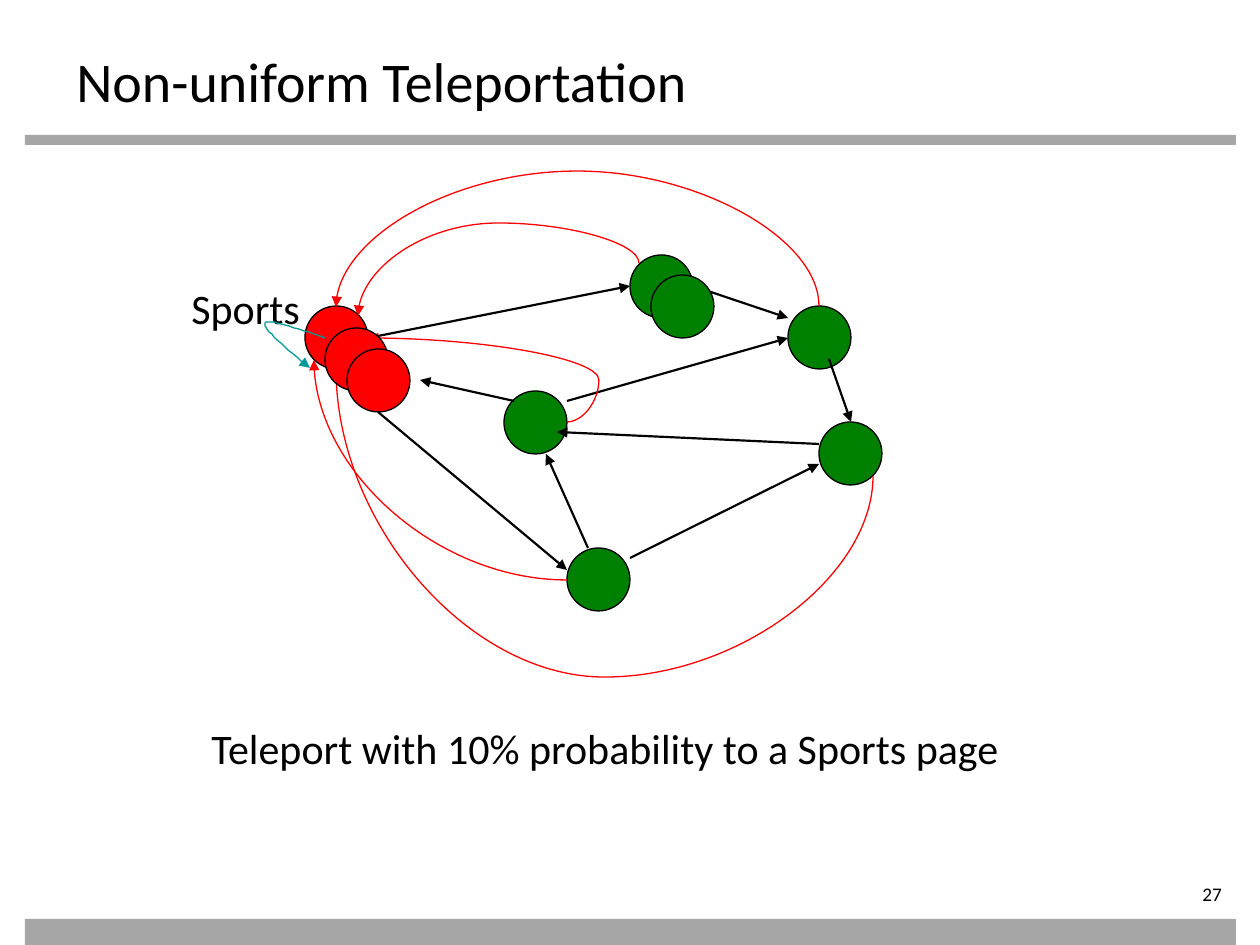
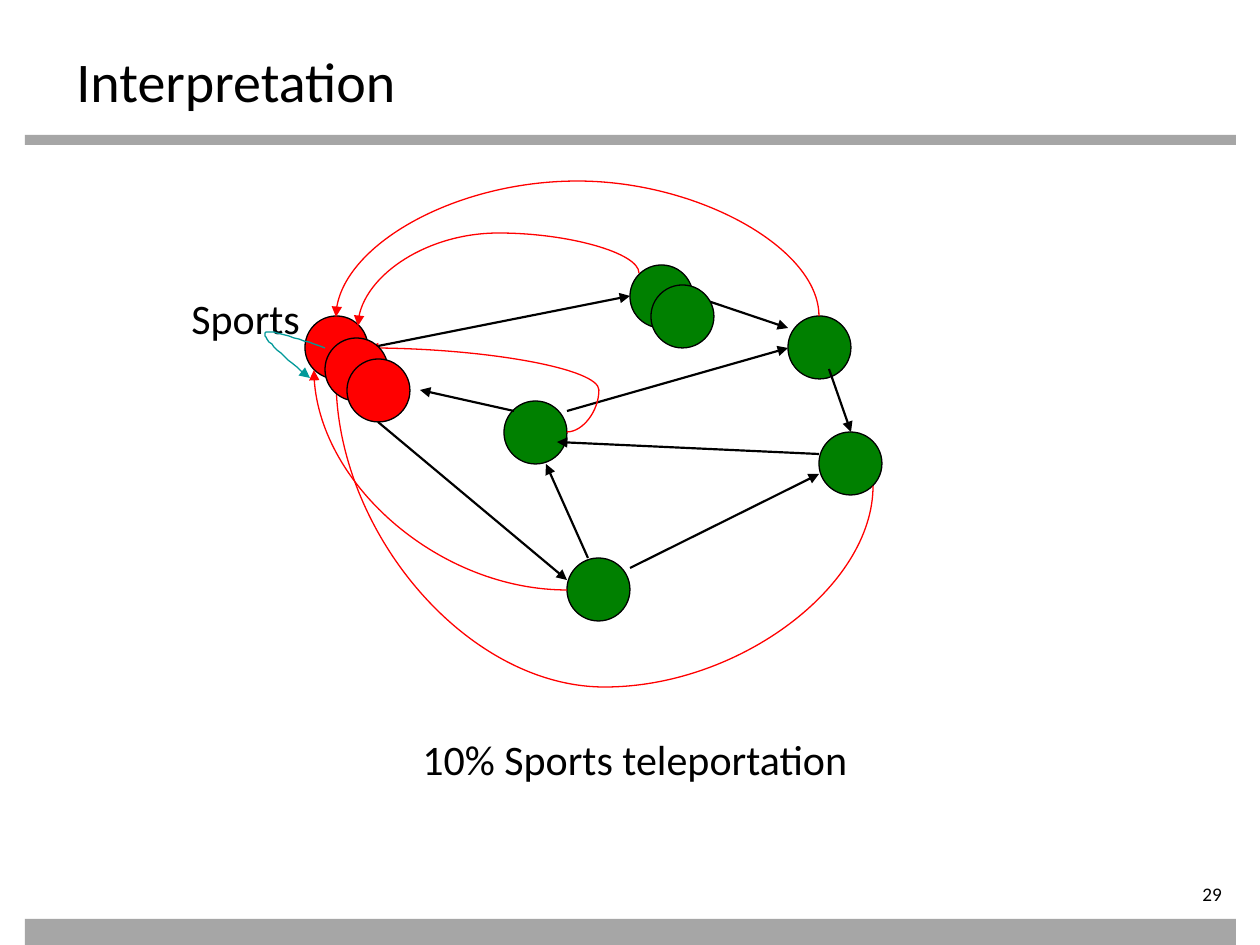
from lxml import etree
from pptx import Presentation
from pptx import util as u
from pptx.dml.color import RGBColor
from pptx.enum import shapes, text
from pptx.oxml.ns import qn

PX = 914400 / 126
FONT = "Calibri"
BLACK, GREY, RED, GREEN, TEAL = "000000", "A6A6A6", "FF0000", "008000", "009999"
NODE = 63

# Graph parts, in px from the corner of the graph box
SPORTS_BACK, SPORTS_FRONT = [(105, 126)], [(125, 148), (147, 169)]
OTHER_BACK = [(430, 75), (304, 211), (367, 368), (588, 126), (619, 242)]
OTHER_FRONT = [(451, 95)]
LINKS_BACK = [
    ((168, 158), (430, 106)), ((367, 221), (588, 158)),
    ((430, 378), (619, 284)), ((619, 264), (357, 252)),
    ((493, 106), (588, 138)), ((629, 179), (651, 242)),
    ((388, 368), (346, 274)),
]
LINKS_FRONT = [((314, 221), (220, 200)), ((178, 232), (367, 390))]
# Start, end, direction of departure, position of the bend (None: one corner)
TELEPORTS = [
    ((619, 126), (136, 127), "vertical", -10),
    ((439, 83), (158, 136), "vertical", 43),
    ((367, 400), (114, 180), "horizontal", None),
    ((367, 242), (168, 158), "horizontal", 399),
    ((673, 296), (136, 189), "vertical", 497),
]
SELF_LOOP = [
    ((125, 158), (96, 148), (67, 138), (65, 143)),
    ((65, 143), (62, 148), (86, 168), (110, 188)),
]


def px(n):
    return u.Emu(round(n * PX))


def colour(code):
    return RGBColor.from_string(code)


def add_text(slide, box, words, size=24, align="LEFT", insets=None):
    frame = slide.shapes.add_textbox(*map(px, box)).text_frame
    frame.word_wrap = True
    if insets:
        (frame.margin_left, frame.margin_top,
         frame.margin_right, frame.margin_bottom) = map(px, insets)
    line = frame.paragraphs[0]
    line.alignment = getattr(text.PP_ALIGN, align)
    run = line.add_run()
    run.text = words
    run.font.name, run.font.size = FONT, u.Pt(size)
    run.font.color.rgb = colour(BLACK)


def add_filled(slide, kind, box, fill, outline=None):
    shape = slide.shapes.add_shape(kind, *map(px, box))
    shape.shadow.inherit = False
    shape.fill.solid()
    shape.fill.fore_color.rgb = colour(fill)
    if outline:
        shape.line.color.rgb = colour(outline)
        shape.line.width = u.Pt(0.75)
    else:
        shape.line.fill.background()


def style_arrow(arrow, line_colour, width):
    arrow.line.color.rgb = colour(line_colour)
    arrow.line.width = u.Pt(width)
    ln = arrow.line._get_or_add_ln()
    etree.SubElement(ln, qn("a:tailEnd"), type="triangle")


def add_arrow(slide, start, end, line_colour, width, kind="STRAIGHT"):
    arrow = slide.shapes.add_connector(
        getattr(shapes.MSO_CONNECTOR, kind), *map(px, start + end))
    style_arrow(arrow, line_colour, width)
    etree.SubElement(arrow._element.spPr, qn("a:effectLst"))
    return arrow


def add_teleport(slide, start, end, departure, bend):
    arrow = add_arrow(slide, start, end, RED, 0.75, "CURVE")
    geometry = arrow._element.spPr.find(qn("a:prstGeom"))
    if bend is None:
        geometry.set("prst", "curvedConnector2")
        return
    axis = 1 if departure == "vertical" else 0
    ratio = (bend - start[axis]) / (end[axis] - start[axis])
    etree.SubElement(geometry.find(qn("a:avLst")), qn("a:gd"),
                     name="adj1", fmla=f"val {round(ratio * 100000)}")
    if departure == "vertical":
        # Swap the sides around the centre and turn the curve upright
        left, top, width, height = arrow.left, arrow.top, arrow.width, arrow.height
        arrow.left = u.Emu(left + (width - height) // 2)
        arrow.top = u.Emu(top + (height - width) // 2)
        arrow.width, arrow.height = height, width
        turn = arrow._element.spPr.find(qn("a:xfrm"))
        turn.set("rot", str(270 * 60000))
        turn.set("flipH", str(int(end[1] > start[1])))
        turn.set("flipV", "1")


def bezier(curve, t):
    weights = ((1 - t) ** 3, 3 * t * (1 - t) ** 2, 3 * t * t * (1 - t), t ** 3)
    return tuple(sum(w * point[axis] for w, point in zip(weights, curve))
                 for axis in (0, 1))


def add_self_loop(slide, place, steps=16):
    points = [place(bezier(curve, i / steps))
              for curve in SELF_LOOP for i in range(1, steps + 1)]
    builder = slide.shapes.build_freeform(*place(SELF_LOOP[0][0]), scale=PX)
    builder.add_line_segments(points, close=False)
    loop = builder.convert_to_shape()
    loop.shadow.inherit = False
    loop.fill.background()
    style_arrow(loop, TEAL, 0.75)


def add_graph(slide, left, top):
    def place(point):
        return left + point[0], top + point[1]

    def add_nodes(corners, fill):
        for corner in corners:
            add_filled(slide, shapes.MSO_SHAPE.OVAL,
                       place(corner) + (NODE, NODE), fill, BLACK)

    def add_links(links):
        for start, end in links:
            add_arrow(slide, place(start), place(end), BLACK, 1.25)

    # Back layer: pages and the links between them
    add_nodes(SPORTS_BACK, RED)
    add_nodes(OTHER_BACK, GREEN)
    add_links(LINKS_BACK)
    # Teleport curves towards the sports pages
    for start, end, departure, bend in TELEPORTS:
        if bend is not None:
            bend += top if departure == "vertical" else left
        add_teleport(slide, place(start), place(end), departure, bend)
    # Front layer
    add_text(slide, place((-21, 96)) + (139, NODE), "Sports")
    add_nodes(SPORTS_FRONT, RED)
    add_nodes(OTHER_FRONT, GREEN)
    add_links(LINKS_FRONT)
    add_self_loop(slide, place)


def add_frame(slide, title, number):
    # Bands, title and page number
    for top, height in ((135, 10), (919, 26)):
        add_filled(slide, shapes.MSO_SHAPE.RECTANGLE, (25, top, 1211, height), GREY)
    add_text(slide, (64, 40, 1134, 70), title, size=32)
    add_text(slide, (1096, 882, 139, 28), number, size=11, align="RIGHT",
             insets=(0, 0, 13, 0))


def add_graph_slide(deck, title, number, graph_top, caption, caption_box):
    slide = deck.slides.add_slide(deck.slide_layouts[6])
    add_frame(slide, title, number)
    add_graph(slide, 200, graph_top)
    add_text(slide, caption_box, caption)


def main():
    deck = Presentation()
    deck.slide_width, deck.slide_height = px(1260), px(945)
    add_graph_slide(deck, "Non-uniform Teleportation", "27", 180,
                    "Teleport with 10% probability to a Sports page",
                    (199, 716, 847, 63))
    add_graph_slide(deck, "Interpretation", "29", 190,
                    "10% Sports teleportation", (410, 727, 466, 63))
    deck.save("out.pptx")


if __name__ == "__main__":
    main()
